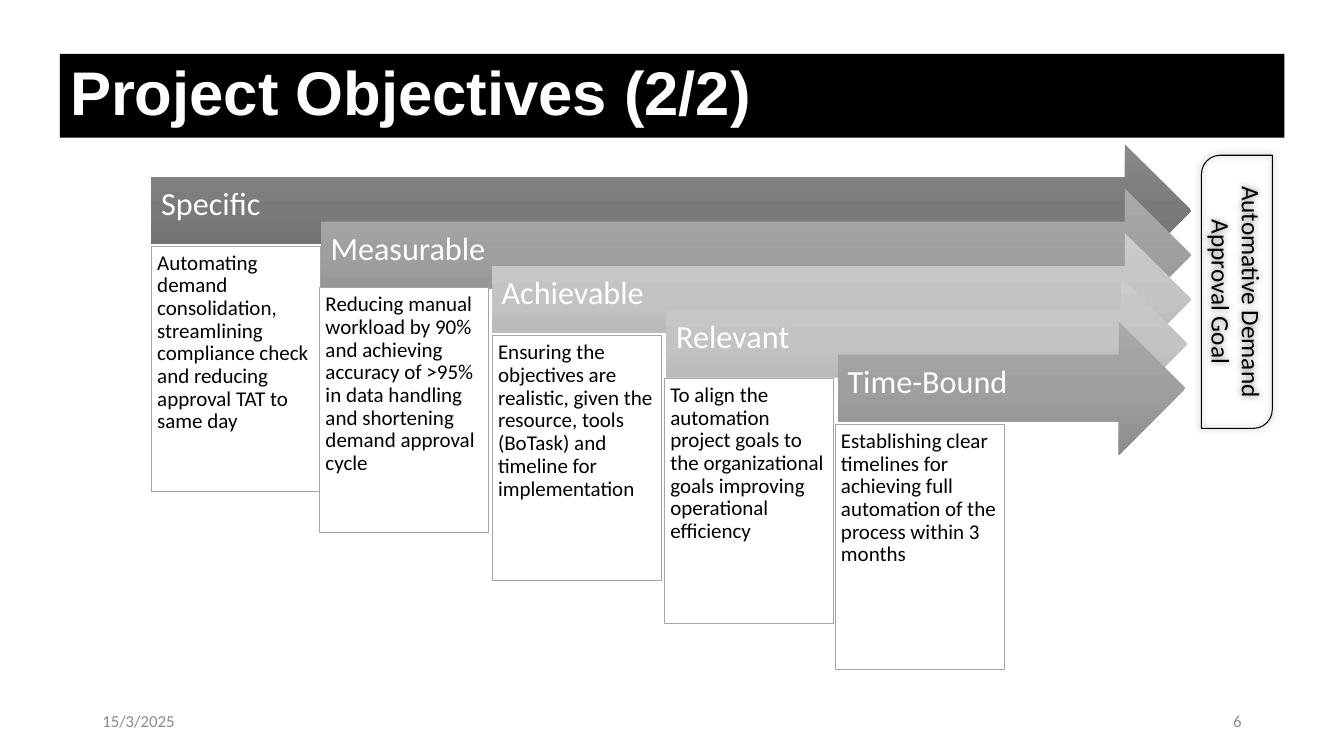
from copy import deepcopy

from lxml import etree
from pptx import Presentation
from pptx.dml.color import RGBColor
from pptx.enum.shapes import MSO_SHAPE
from pptx.enum.text import MSO_ANCHOR, MSO_AUTO_SIZE, PP_ALIGN
from pptx.oxml.ns import qn
from pptx.util import Pt

ARROW, CARD, GOAL = MSO_SHAPE.RIGHT_ARROW, MSO_SHAPE.RECTANGLE, MSO_SHAPE.ROUND_2_DIAG_RECTANGLE
TOP, MIDDLE = MSO_ANCHOR.TOP, MSO_ANCHOR.MIDDLE
LEFT, CENTER, RIGHT = PP_ALIGN.LEFT, PP_ALIGN.CENTER, PP_ALIGN.RIGHT
NO_FIT = MSO_AUTO_SIZE.NONE

COLORS = {"black": "000000", "white": "FFFFFF", "border": "A5A5A5", "footer": "8C8C8C"}
GRADIENTS = {
    "dark": ("898989", "7A7A7A", "6C6C6C"),
    "medium": ("A9A9A9", "9F9F9F", "8D8D8D"),
    "light": ("CBCBCB", "C3C3C3", "AEAEAE"),
}
INSETS = (7.2, 3.6, 7.2, 3.6)
ARROW_HEIGHT, ARROW_STEP = 95, 31.7
CARD_WIDTH, CARD_HEIGHT = 121, 175

# Name, gradient, arrow left and right, card left and top, description
OBJECTIVES = [
    ("Specific", "dark", 108, 851, 108, 175.7,
     "Automating demand consolidation, streamlining compliance check and reducing "
     "approval TAT to same day"),
    ("Measurable", "medium", 229, 851, 228.2, 205.4,
     "Reducing manual workload by 90% and achieving accuracy of >95% in data handling "
     "and shortening demand approval cycle"),
    ("Achievable", "light", 351.2, 851, 351.4, 239.8,
     "Ensuring the objectives are realistic, given the resource, tools (BoTask) and "
     "timeline for implementation"),
    ("Relevant", "light", 475.9, 848.2, 474.5, 270.2,
     "To align the automation project goals to the organizational goals improving "
     "operational efficiency"),
    ("Time-Bound", "medium", 598.3, 846.7, 596.4, 303.1,
     "Establishing clear timelines for achieving full automation of the process within "
     "3 months"),
]


def rgb(name):
    return RGBColor.from_string(COLORS[name])


def write(shape, text, size, color, font="Calibri", align=LEFT, anchor=MIDDLE,
          insets=INSETS, spacing=1.0):
    frame = shape.text_frame
    frame.word_wrap = True
    frame.auto_size = NO_FIT
    frame.vertical_anchor = anchor
    (frame.margin_left, frame.margin_top,
     frame.margin_right, frame.margin_bottom) = map(Pt, insets)
    para = frame.paragraphs[0]
    para.text = text
    para.alignment = align
    para.line_spacing = spacing
    para.font.name = font
    para.font.size = Pt(size)
    para.font.color.rgb = rgb(color)
    return para


def add_plain_shape(page, kind, box):
    shape = page.shapes.add_shape(kind, *map(Pt, box))
    shape.shadow.inherit = False
    return shape


def fill_gradient(shape, colors):
    shape.fill.gradient()
    shape.fill.gradient_angle = 270
    stops = shape._element.spPr.find(".//" + qn("a:gsLst"))
    stops.insert(1, deepcopy(stops[0]))
    for index, (stop, color) in enumerate(zip(shape.fill.gradient_stops, colors)):
        stop.position = index / 2
        stop.color.rgb = RGBColor.from_string(color)


def add_title(page, box):
    title = page.shapes.title
    title.left, title.top, title.width, title.height = map(Pt, box)
    title.fill.solid()
    title.fill.fore_color.rgb = rgb("black")
    para = write(title, "Project Objectives (2/2)", 44, "white", "Arial", spacing=0.9)
    para.font.bold = True


def add_arrow(page, box, name, gradient):
    arrow = add_plain_shape(page, ARROW, box)
    fill_gradient(arrow, GRADIENTS[gradient])
    arrow.line.fill.background()
    write(arrow, name, 23, "white", insets=(7.2, 7.2, 20, 15), spacing=0.9)


def add_card(page, box, description):
    card = add_plain_shape(page, CARD, box)
    card.fill.solid()
    card.fill.fore_color.rgb = rgb("white")
    card.line.color.rgb = rgb("border")
    card.line.width = Pt(0.5)
    write(card, description, 15, "black", anchor=TOP, insets=(4.3,) * 4, spacing=0.9)


def add_cascade(page, top):
    for row, (name, gradient, left, right, card_left, card_top, text) in enumerate(OBJECTIVES):
        add_arrow(page, (left, top + row * ARROW_STEP, right - left, ARROW_HEIGHT),
                  name, gradient)
        add_card(page, (card_left, card_top, CARD_WIDTH, CARD_HEIGHT), text)


def add_goal(page, box):
    goal = add_plain_shape(page, GOAL, box)
    goal.adjustments[0] = 0.265
    goal.adjustments[1] = 0
    goal.fill.background()
    goal.line.color.rgb = rgb("black")
    goal.line.width = Pt(0.75)
    write(goal, "Automative Demand Approval Goal", 18, "black", align=CENTER)
    goal.text_frame._txBody.bodyPr.set("vert", "vert")
    # Soft shadow around the outline
    effects = goal._element.spPr.find(qn("a:effectLst"))
    shadow = etree.SubElement(effects, qn("a:outerShdw"), blurRad=str(Pt(5)),
                              dist="0", algn="ctr", rotWithShape="0")
    tint = etree.SubElement(shadow, qn("a:srgbClr"), val=COLORS["black"])
    etree.SubElement(tint, qn("a:alpha"), val="50000")


def add_footer_text(page, box, text, align):
    footer = page.shapes.add_textbox(*map(Pt, box))
    write(footer, text, 12, "footer", align=align)


def main():
    deck = Presentation()
    deck.slide_width, deck.slide_height = Pt(960), Pt(540)
    page = deck.slides.add_slide(deck.slide_layouts[5])
    add_title(page, (42.8, 38.5, 874.6, 59.8))
    add_footer_text(page, (678, 500.5, 216, 28.8), "6", RIGHT)
    add_cascade(page, 103)
    add_goal(page, (858.2, 110.9, 50.6, 195.1))
    add_footer_text(page, (66, 500.5, 216, 28.8), "15/3/2025", LEFT)
    deck.save("out.pptx")


if __name__ == "__main__":
    main()
